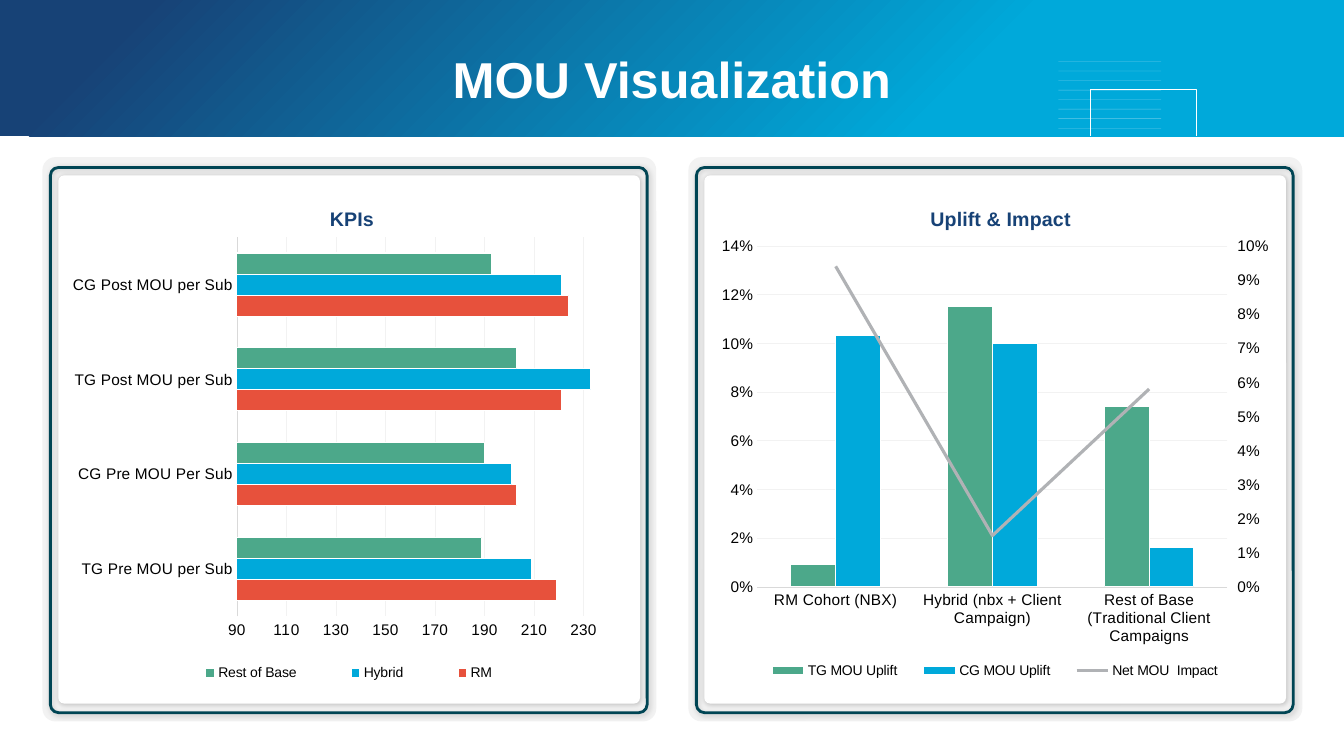
from lxml import etree
from pptx import Presentation
from pptx.chart.axis import ValueAxis
from pptx.chart.data import CategoryChartData
from pptx.dml.color import RGBColor
from pptx.enum.chart import XL_CHART_TYPE as ChartType, XL_LEGEND_POSITION as LegendPosition
from pptx.enum.chart import XL_MARKER_STYLE as MarkerStyle, XL_TICK_MARK as TickMark
from pptx.enum.shapes import MSO_CONNECTOR as ConnectorType, MSO_SHAPE as ShapeType
from pptx.enum.text import MSO_ANCHOR as Anchor, PP_ALIGN as Align
from pptx.oxml import parse_xml
from pptx.oxml.ns import nsdecls, qn
from pptx.util import Cm, Pt

COLORS = {name: RGBColor.from_string(value) for name, value in {
    "navy": "174276", "blue": "00A9DA", "green": "4CA88A", "red": "E7513C",
    "silver": "B0B2B5", "teal": "004554", "card": "F2F2F2", "axis": "D9D9D9",
    "white": "FFFFFF", "black": "000000"}.items()}


def set_layout(element, x, y, width=None, height=None):
    """Place a title, legend or plot area by fractions of the chart."""
    for old in element.findall(qn("c:layout")):
        element.remove(old)
    lead = next(element.iterchildren(qn("c:tx"), qn("c:legendPos")), None)
    target = '<c:layoutTarget val="inner"/>' if lead is None else ""
    size = f'<c:w val="{width}"/><c:h val="{height}"/>' if width else ""
    layout = parse_xml(
        f'<c:layout {nsdecls("c")}><c:manualLayout>{target}<c:xMode val="edge"/>'
        f'<c:yMode val="edge"/><c:x val="{x}"/><c:y val="{y}"/>{size}</c:manualLayout></c:layout>')
    if lead is None:
        element.insert(0, layout)
    else:
        lead.addnext(layout)


def style_font(font, size, color, bold=False):
    font.name, font.size, font.bold = "Arial", Pt(size), bold
    font.color.rgb = COLORS[color]


deck = Presentation()
deck.slide_width, deck.slide_height = Cm(33.87), Cm(19.05)
shapes = deck.slides.add_slide(deck.slide_layouts[5]).shapes

# Header band
band = shapes.add_shape(ShapeType.RECTANGLE, 0, 0, deck.slide_width, Cm(3.43))
band.shadow.inherit = False
band.line.fill.background()
band.fill.gradient()
band.fill.gradient_angle = 315
for stop, color, position in zip(band.fill.gradient_stops, ("navy", "blue"), (0.1, 0.71)):
    stop.color.rgb = COLORS[color]
    stop.position = position

# Header ornament: faint rules and an open frame
for row in range(8):
    y = Cm(1.55 + 0.24 * row)
    rule = shapes.add_connector(ConnectorType.STRAIGHT, Cm(26.67), y, Cm(29.26), y)
    rule.line.width = Pt(0.25)
    rule.line.color.rgb = COLORS["white"]
    tint = rule._element.spPr.find(".//" + qn("a:srgbClr"))
    etree.SubElement(tint, qn("a:alpha"), val="40000")
    etree.SubElement(rule._element.spPr, qn("a:effectLst"))
builder = shapes.build_freeform(Cm(27.48), Cm(3.43))
builder.add_line_segments([(Cm(27.48), Cm(2.26)), (Cm(30.15), Cm(2.26)),
                           (Cm(30.15), Cm(3.43))], close=False)
frame = builder.convert_to_shape()
frame.shadow.inherit = False
frame.fill.background()
frame.line.color.rgb = COLORS["white"]
frame.line.width = Pt(1.19)

# Title, raised above the band
title = shapes.title
title.left, title.top, title.width, title.height = Cm(1.24), Cm(1.15), Cm(31.39), Cm(1.63)
title.text_frame.text = "MOU Visualization"
title.text_frame.vertical_anchor = Anchor.MIDDLE
title.text_frame.paragraphs[0].alignment = Align.CENTER
style_font(title.text_frame.paragraphs[0].runs[0].font, 36, "white", True)
shapes._spTree.append(title._element)

# Cards: backing, white panel and teal outline
LAYERS = [
    (1.07, 3.96, 15.47, 14.22, 0.023, "card"),
    (1.47, 4.42, 14.66, 13.31, 0.011, "white"),
    (1.27, 4.22, 15.04, 13.74, 0.015, "teal"),
]
CARD_STEP = 16.28
for card in range(2):
    for left, top, width, height, corner, color in LAYERS:
        layer = shapes.add_shape(ShapeType.ROUNDED_RECTANGLE, Cm(left + card * CARD_STEP),
                                 Cm(top), Cm(width), Cm(height))
        layer.adjustments[0] = corner
        layer.shadow.inherit = False
        if color == "teal":
            layer.fill.background()
            layer.line.color.rgb = COLORS[color]
            layer.line.width = Pt(2)
        else:
            layer.fill.solid()
            layer.fill.fore_color.rgb = COLORS[color]
            layer.line.fill.background()
        if color != "card":
            layer._element.spPr.find(qn("a:effectLst")).append(parse_xml(
                f'<a:outerShdw {nsdecls("a")} blurRad="50800" dist="12700" dir="2700000">'
                '<a:srgbClr val="000000"><a:alpha val="20000"/></a:srgbClr></a:outerShdw>'))

# Charts
CHARTS = [
    {"title": "KPIs", "title_x": 0.46, "type": ChartType.BAR_CLUSTERED,
     "format": "#,##0", "scale": (90, 240, 20),
     "plot": (0.303, 0.107, 0.653, 0.742), "legend": (0.16, 0.935, 0.68, 0.05),
     "categories": ["TG Pre MOU per Sub", "CG Pre MOU Per Sub",
                    "TG Post MOU per Sub", "CG Post MOU per Sub"],
     "series": [("RM", (219, 203, 221, 224), "red"),
                ("Hybrid", (209, 201, 233, 221), "blue"),
                ("Rest of Base", (189, 190, 203, 193), "green")]},
    {"title": "Uplift & Impact", "title_x": 0.38, "type": ChartType.COLUMN_CLUSTERED,
     "format": "0%", "scale": (0, 0.14, 0.02),
     "plot": (0.082, 0.124, 0.827, 0.667), "legend": (0.07, 0.93, 0.86, 0.05),
     "categories": ["RM Cohort (NBX)", "Hybrid (nbx + Client Campaign)",
                    "Rest of Base (Traditional Client Campaigns"],
     "series": [("TG MOU Uplift", (0.009, 0.115, 0.074), "green"),
                ("CG MOU Uplift", (0.103, 0.1, 0.016), "blue"),
                ("Net MOU  Impact", (0.094, 0.015, 0.058), "silver")]},
]
for index, content in enumerate(CHARTS):
    data = CategoryChartData(number_format=content["format"])
    data.categories = content["categories"]
    for name, values, color in content["series"]:
        data.add_series(name, values)
    chart = shapes.add_chart(content["type"], Cm(1.63 + index * CARD_STEP), Cm(4.6),
                             Cm(14.33), Cm(12.88), data).chart
    style_font(chart.font, 10, "black")
    heading = chart.chart_title.text_frame
    heading.text = content["title"]
    style_font(heading.paragraphs[0].runs[0].font, 14, "navy", True)
    set_layout(chart.chart_title._element, content["title_x"], 0.04)
    chart.has_legend = True
    chart.legend.position = LegendPosition.BOTTOM
    chart.legend.include_in_layout = False
    style_font(chart.legend.font, 10, "black")
    set_layout(chart.legend._element, *content["legend"])

    scale = chart.value_axis
    for axis in (chart.category_axis, scale):
        axis.major_tick_mark = axis.minor_tick_mark = TickMark.NONE
        style_font(axis.tick_labels.font, 11, "black")
    for part, color in ((chart.category_axis, "axis"), (scale.major_gridlines, "card")):
        part.format.line.color.rgb = COLORS[color]
        part.format.line.width = Pt(0.25)
    scale.minimum_scale, scale.maximum_scale, scale.major_unit = content["scale"]
    scale.format.line.fill.background()
    scale.tick_labels.number_format = content["format"]
    scale.tick_labels.number_format_is_linked = False

    bars = chart.plots[0]
    bars.gap_width, bars.overlap, bars.vary_by_categories = 150, 0, False
    for series, (name, values, color) in zip(bars.series, content["series"]):
        series.format.fill.solid()
        series.format.fill.fore_color.rgb = COLORS[color]
        series.format.line.color.rgb = COLORS["white"]
        series.format.line.width = Pt(0.75)
    plot_area = chart._chartSpace.chart.plotArea
    set_layout(plot_area, *content["plot"])

# Net impact becomes a line on a right-hand axis of the second chart
impact = bars.series[2]._element
for flag in impact.findall(qn("c:invertIfNegative")):
    impact.remove(flag)
line_plot = parse_xml(
    f'<c:lineChart {nsdecls("c")}><c:grouping val="standard"/><c:varyColors val="0"/>'
    '<c:marker val="1"/><c:axId val="5001"/><c:axId val="5002"/></c:lineChart>')
line_plot.insert(2, impact)
bars._element.addnext(line_plot)
right_axis = parse_xml(
    f'<c:valAx {nsdecls("c", "a")}><c:axId val="5002"/><c:scaling>'
    '<c:orientation val="minMax"/><c:max val="0.1"/><c:min val="0"/></c:scaling>'
    '<c:delete val="0"/><c:axPos val="r"/><c:numFmt formatCode="0%" sourceLinked="0"/>'
    '<c:majorTickMark val="out"/><c:minorTickMark val="none"/><c:tickLblPos val="nextTo"/>'
    '<c:crossAx val="5001"/><c:crosses val="max"/><c:majorUnit val="0.01"/></c:valAx>')
hidden_axis = parse_xml(
    f'<c:catAx {nsdecls("c")}><c:axId val="5001"/><c:scaling><c:orientation val="minMax"/>'
    '</c:scaling><c:delete val="1"/><c:axPos val="b"/><c:crossAx val="5002"/></c:catAx>')
scale._element.addnext(right_axis)
right_axis.addnext(hidden_axis)
style_font(ValueAxis(right_axis).tick_labels.font, 11, "black")
ValueAxis(right_axis).format.line.fill.background()
net_line = chart.plots[1].series[0]
net_line.smooth = False
net_line.marker.style = MarkerStyle.NONE
net_line.format.line.color.rgb = COLORS["silver"]
net_line.format.line.width = Pt(2.25)
deck.save("out.pptx")
